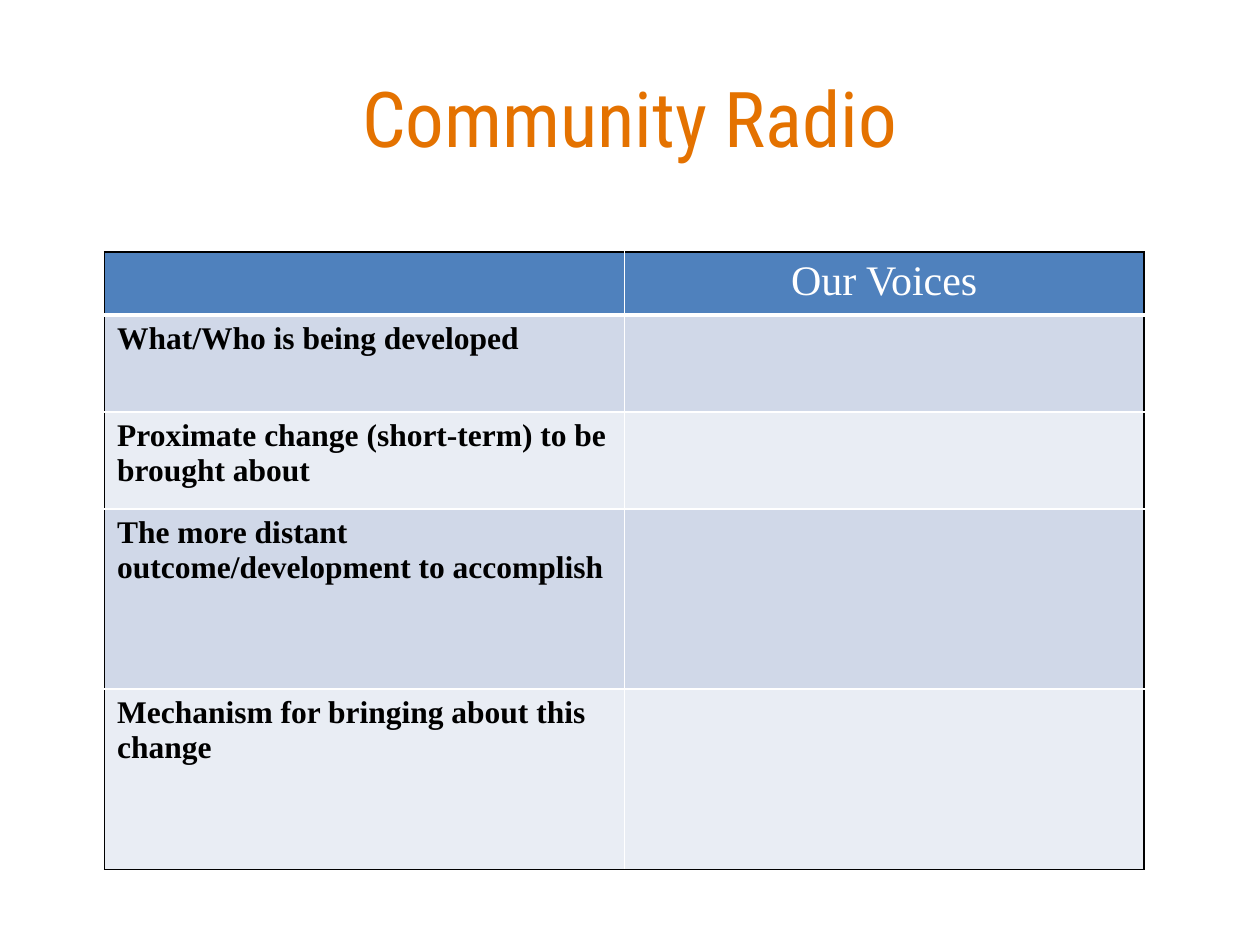
from lxml import etree
from pptx import Presentation
from pptx.dml.color import RGBColor
from pptx.enum.text import MSO_ANCHOR, PP_ALIGN
from pptx.oxml.ns import qn
from pptx.util import Inches, Pt

CENTER = PP_ALIGN.CENTER
LEFT = PP_ALIGN.LEFT
MIDDLE = MSO_ANCHOR.MIDDLE
TITLE_ONLY = 5

COLORS = {
    "title": "E47200",
    "header": "4F81BD",
    "band_dark": "D0D8E8",
    "band_light": "E9EDF4",
    "black": "000000",
    "white": "FFFFFF",
}
TITLE_FONT = "Roboto Condensed"
TABLE_FONT = "Times New Roman"

COLUMN_WIDTH = 4.125
ROW_HEIGHTS = [0.5, 0.77, 0.77, 1.43, 1.43]
ROWS = [
    ["", "Our Voices"],
    ["What/Who is being developed", ""],
    ["Proximate change (short-term) to be brought about", ""],
    ["The more distant outcome/development to accomplish", ""],
    ["Mechanism for bringing about this change", ""],
]


def write_text(text_frame, text, font, size, color, bold=False, align=LEFT):
    paragraph = text_frame.paragraphs[0]
    paragraph.alignment = align
    run = paragraph.add_run()
    run.text = text
    run.font.name = font
    run.font.size = Pt(size)
    run.font.bold = bold
    run.font.color.rgb = RGBColor.from_string(COLORS[color])


def add_border(cell, side, color, width):
    properties = cell._tc.get_or_add_tcPr()
    line = etree.SubElement(properties, qn(f"a:ln{side}"), w=str(Pt(width)))
    fill = etree.SubElement(line, qn("a:solidFill"))
    etree.SubElement(fill, qn("a:srgbClr"), val=COLORS[color])


def style_cell(cell, row, column):
    """Black outer edges, white inner rules and banded row fills."""
    last_row = len(ROWS) - 1
    add_border(cell, "L", "black" if column == 0 else "white", 1)
    add_border(cell, "R", "black" if column == 1 else "white", 1)
    add_border(cell, "T", "black" if row == 0 else "white", 1)
    add_border(cell, "B", "black" if row == last_row else "white",
               3 if row == 0 else 1)
    band = "band_dark" if row % 2 else "band_light"
    cell.fill.solid()
    cell.fill.fore_color.rgb = RGBColor.from_string(
        COLORS["header" if row == 0 else band])


def add_title(slide, text):
    title = slide.shapes.title
    title.left, title.top = Inches(0.5), Inches(0.3)
    title.width, title.height = Inches(9), Inches(1.25)
    title.text_frame.vertical_anchor = MIDDLE
    write_text(title.text_frame, text, font=TITLE_FONT, size=44,
               color="title", align=CENTER)


def add_question_table(slide):
    frame = slide.shapes.add_table(
        len(ROWS), 2, Inches(0.83), Inches(2),
        Inches(2 * COLUMN_WIDTH), Inches(sum(ROW_HEIGHTS)))
    table = frame.table
    for column in table.columns:
        column.width = Inches(COLUMN_WIDTH)
    for row, (height, texts) in enumerate(zip(ROW_HEIGHTS, ROWS)):
        table.rows[row].height = Inches(height)
        for column, text in enumerate(texts):
            cell = table.cell(row, column)
            style_cell(cell, row, column)
            if not text:
                continue
            if row == 0:
                write_text(cell.text_frame, text, font=TABLE_FONT, size=24,
                           color="white", align=CENTER)
            else:
                write_text(cell.text_frame, text, font=TABLE_FONT, size=18,
                           color="black", bold=True)


def main():
    presentation = Presentation()
    presentation.slide_width = Inches(10)
    presentation.slide_height = Inches(7.5)
    slide = presentation.slides.add_slide(
        presentation.slide_layouts[TITLE_ONLY])
    add_question_table(slide)
    add_title(slide, "Community Radio")
    presentation.save("out.pptx")


if __name__ == "__main__":
    main()
